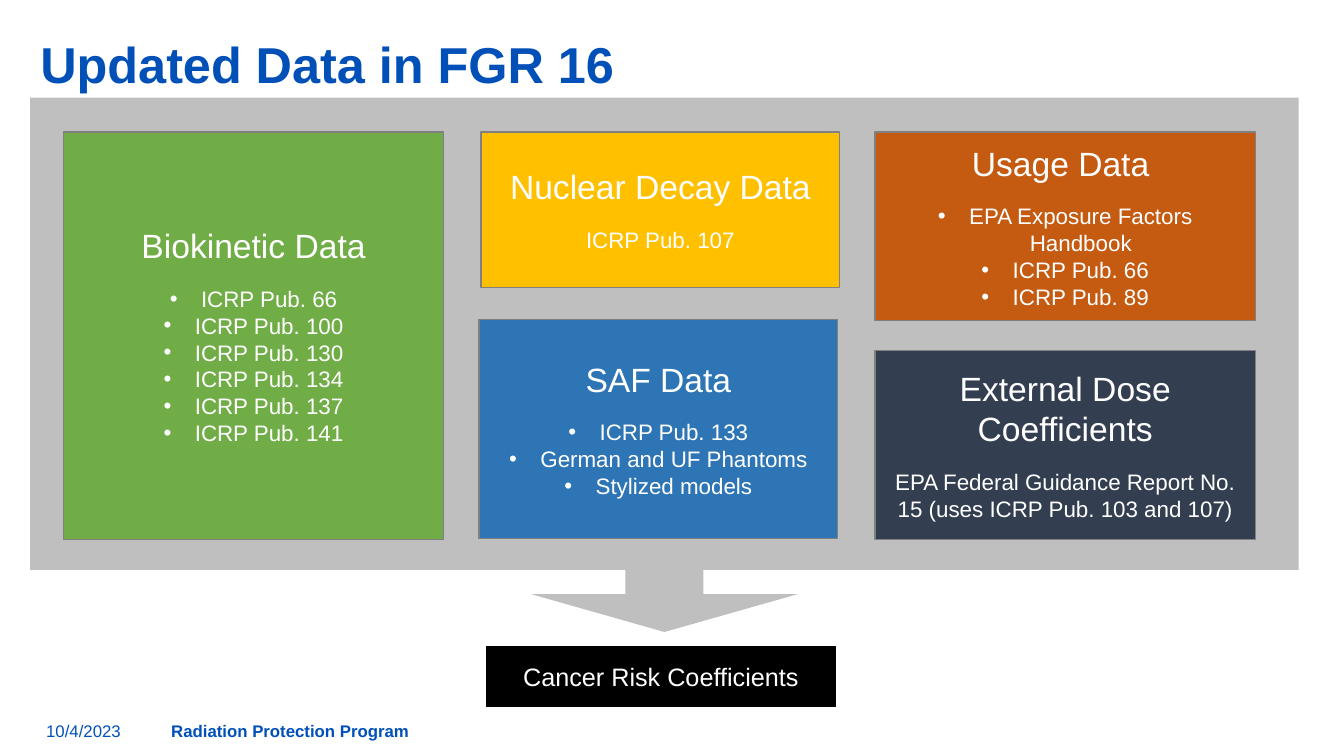
import pptx
import pptx.dml.color
import pptx.enum.shapes
import pptx.enum.text
import pptx.util
from lxml import etree

Inches = pptx.util.Inches
Pt = pptx.util.Pt
SHAPE = pptx.enum.shapes.MSO_SHAPE
ANCHOR = pptx.enum.text.MSO_ANCHOR
ALIGN = pptx.enum.text.PP_ALIGN
A_NS = "{http://schemas.openxmlformats.org/drawingml/2006/main}"


def rgb(value):
    return pptx.dml.color.RGBColor.from_string(value)


def add_bullet(p, indent=Inches(0.31)):
    pPr = p._p.get_or_add_pPr()
    pPr.set("marL", str(indent))
    pPr.set("indent", str(-indent))
    etree.SubElement(pPr, A_NS + "buFont").set("typeface", "Arial")
    etree.SubElement(pPr, A_NS + "buChar").set("char", "•")


class Deck:
    font = "Arial"
    blue = "0150B9"
    white = "FFFFFF"

    def __init__(self):
        self.prs = pptx.Presentation()
        self.prs.slide_width = Inches(13.33)
        self.prs.slide_height = Inches(7.5)
        self.s = self.prs.slides.add_slide(self.prs.slide_layouts[5])

    def style(self, p, size, color, bold=False):
        for r in p.runs:
            r.font.name = self.font
            r.font.size = Pt(size)
            r.font.bold = bold
            r.font.color.rgb = rgb(color)

    def title(self, text, x, y, w, h):
        sp = self.s.shapes.title
        sp.left, sp.top, sp.width, sp.height = map(Inches, (x, y, w, h))
        tf = sp.text_frame
        tf.text = text
        tf.word_wrap = True
        tf.auto_size = pptx.enum.text.MSO_AUTO_SIZE.NONE
        tf.vertical_anchor = ANCHOR.TOP
        tf.margin_top = Inches(0.08)
        p = tf.paragraphs[0]
        p.alignment = ALIGN.LEFT
        p.line_spacing = 0.9
        self.style(p, 36, "0050B8", True)

    def shape(self, kind, x, y, w, h, fill, line=None, line_width=1):
        sp = self.s.shapes.add_shape(kind, *map(Inches, (x, y, w, h)))
        sp.shadow.inherit = False
        sp.fill.solid()
        sp.fill.fore_color.rgb = rgb(fill)
        if line:
            sp.line.color.rgb = rgb(line)
            sp.line.width = Pt(line_width)
        else:
            sp.line.fill.background()
        return sp

    def label(self, sp, text, size):
        """Centre a heading in a shape and return its text frame."""
        tf = sp.text_frame
        tf.text = text
        tf.word_wrap = True
        tf.vertical_anchor = ANCHOR.MIDDLE
        p = tf.paragraphs[0]
        p.alignment = ALIGN.CENTER
        self.style(p, size, self.white)
        return tf

    def data_box(self, heading, items, bulleted, x, y, w, h, fill):
        sp = self.shape(SHAPE.RECTANGLE, x, y, w, h, fill, "808080")
        tf = self.label(sp, heading, 24)
        tf.paragraphs[0].space_after = Pt(14)
        for item in items:
            p = tf.add_paragraph()
            p.text = item
            p.alignment = ALIGN.CENTER
            if bulleted:
                add_bullet(p)
            self.style(p, 16, self.white)

    def footer(self, text, x, w, bold=False):
        sp = self.s.shapes.add_textbox(*map(Inches, (x, 7.05, w, 0.4)))
        tf = sp.text_frame
        tf.text = text
        tf.word_wrap = True
        tf.vertical_anchor = ANCHOR.MIDDLE
        self.style(tf.paragraphs[0], 12, self.blue, bold)


def main():
    deck = Deck()
    callout = deck.shape(SHAPE.DOWN_ARROW_CALLOUT, 0.3, 0.97, 12.58, 5.3, "BFBFBF")
    for i, value in enumerate((0.146, 0.25, 0.071, 0.884)):
        callout.adjustments[i] = value
    deck.title("Updated Data in FGR 16", 0.3, 0.32, 12.58, 0.52)

    top, wide, narrow, right = 1.31, 3.77, 3.56, 8.68
    biokinetic = [f"ICRP Pub. {n}" for n in (66, 100, 130, 134, 137, 141)]
    boxes = [
        ("Biokinetic Data", biokinetic, True, 0.63, top, wide, 4.04, "70AD47"),
        ("Nuclear Decay Data", ["ICRP Pub. 107"], False,
         4.77, top, narrow, 1.54, "FFC000"),
        ("External Dose Coefficients",
         ["EPA Federal Guidance Report No. 15 (uses ICRP Pub. 103 and 107)"], False,
         right, 3.48, wide, 1.87, "333F50"),
        ("Usage Data ",
         ["EPA Exposure Factors Handbook", "ICRP Pub. 66", "ICRP Pub. 89"], True,
         right, top, wide, 1.87, "C55A11"),
        ("SAF Data",
         ["ICRP Pub. 133", "German and UF Phantoms", "Stylized models"], True,
         4.75, 3.17, narrow, 2.17, "2E75B6"),
    ]
    for box in boxes:
        deck.data_box(*box)

    result = deck.shape(SHAPE.RECTANGLE, 4.81, 6.4, 3.49, 0.62,
                        "000000", deck.white, 1.5)
    deck.label(result, "Cancer Risk Coefficients", 18)

    deck.footer("10/4/2023", 0.36, 3)
    deck.footer("Radiation Protection Program", 1.6, 10.26, True)
    deck.prs.save("out.pptx")


if __name__ == "__main__":
    main()
